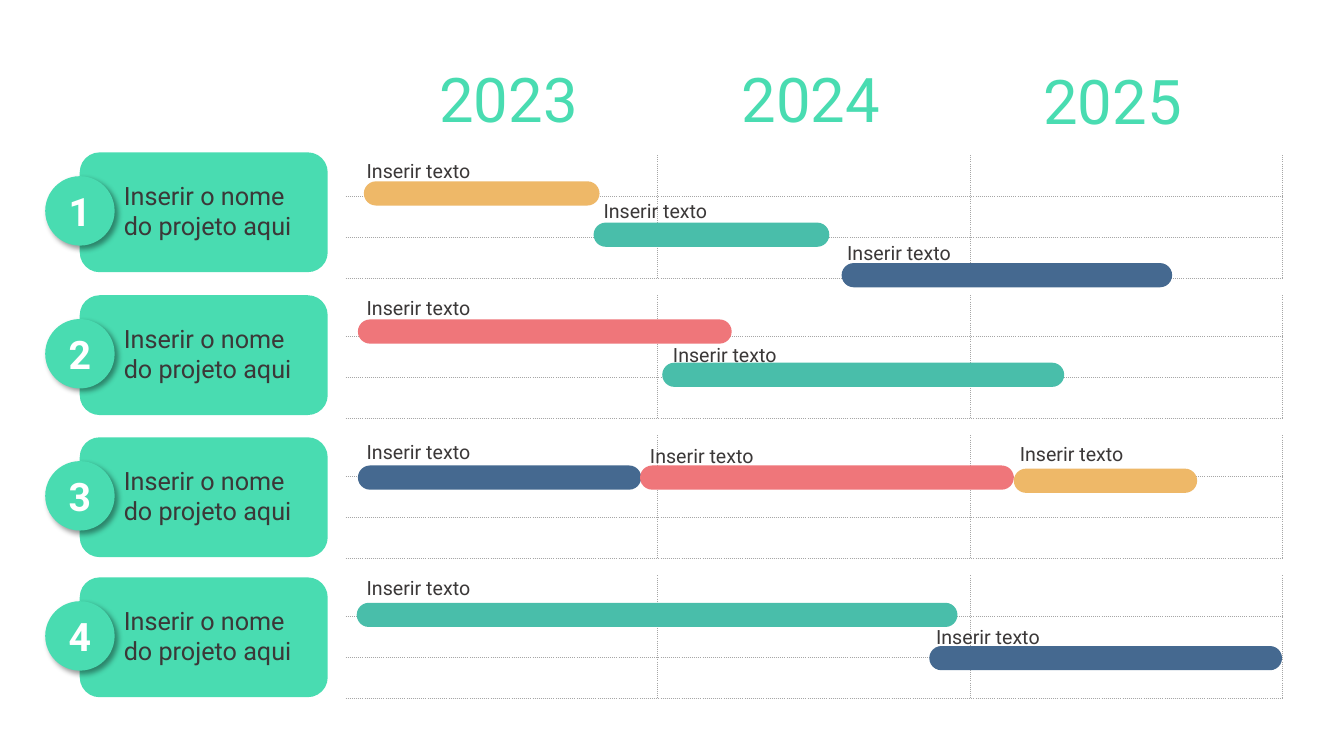
from lxml import etree
from pptx import Presentation
from pptx.dml.color import RGBColor
from pptx.enum.shapes import MSO_SHAPE as Shape
from pptx.enum.text import MSO_ANCHOR as Anchor, PP_ALIGN as Align
from pptx.oxml import parse_xml
from pptx.oxml.ns import nsdecls, qn
from pptx.util import Cm, Pt

MINT = RGBColor(0x49, 0xDC, 0xB1)
AMBER = RGBColor(0xEE, 0xB8, 0x68)
TEAL = RGBColor(0x49, 0xBE, 0xAA)
BLUE = RGBColor(0x45, 0x69, 0x90)
CORAL = RGBColor(0xEF, 0x76, 0x7A)
DARK = RGBColor(0x3B, 0x38, 0x38)
GREY = RGBColor(0xA6, 0xA6, 0xA6)
WHITE = RGBColor(0xFF, 0xFF, 0xFF)

prs = Presentation()
prs.slide_width, prs.slide_height = Cm(33.87), Cm(19.05)
slide = prs.slides.add_slide(prs.slide_layouts[6])


def add_filled(kind, left, top, width, height, colour):
    shape = slide.shapes.add_shape(kind, Cm(left), Cm(top), Cm(width), Cm(height))
    shape.shadow.inherit = False
    shape.fill.solid()
    shape.fill.fore_color.rgb = colour
    shape.line.fill.background()
    return shape


def add_text(lines, left, top, width, height, size, colour, wrap=True):
    frame = slide.shapes.add_textbox(Cm(left), Cm(top), Cm(width), Cm(height)).text_frame
    frame.word_wrap = wrap
    frame.text = lines
    for paragraph in frame.paragraphs:
        paragraph.font.name = "Roboto"
        paragraph.font.size = Pt(size)
        paragraph.font.color.rgb = colour
    return frame


# Project cards with numbered badges
for number, card_top in enumerate((3.84, 7.44, 11.02, 14.55), start=1):
    add_filled(Shape.ROUNDED_RECTANGLE, 2.01, card_top, 6.25, 3.02, MINT)

    badge = add_filled(Shape.OVAL, 1.14, card_top + 0.6, 1.75, 1.75, MINT)
    badge._element.spPr.find(qn("a:effectLst")).append(parse_xml(
        f'<a:outerShdw {nsdecls("a")} blurRad="50800" dist="38100" dir="2700000" '
        'algn="tl" rotWithShape="0"><a:srgbClr val="000000"><a:alpha val="40000"/>'
        '</a:srgbClr></a:outerShdw>'))
    badge.text_frame.text = str(number)
    badge.text_frame.vertical_anchor = Anchor.MIDDLE
    numeral = badge.text_frame.paragraphs[0]
    numeral.alignment = Align.CENTER
    numeral.font.name = "Roboto"
    numeral.font.size = Pt(28)
    numeral.font.bold = True
    numeral.font.color.rgb = WHITE

    add_text("Inserir o nome\ndo projeto aqui", 2.87, card_top + 0.58, 5.82, 1.8, 18, DARK)

# Year headings
for year, left, top in (("2023", 10.82, 1.42), ("2024", 18.44, 1.42), ("2025", 26.04, 1.47)):
    add_text(year, left, top, 4.14, 2.13, 44, MINT, wrap=False)

# Dotted time grids, open at the top and left
for project in range(4):
    grid = slide.shapes.add_table(
        3, 3, Cm(8.71), Cm(3.91 + 3.53 * project), Cm(23.6), Cm(3.1)).table
    grid.first_row = grid.horz_banding = False
    for row in range(3):
        for column in range(3):
            cell = grid.cell(row, column)
            cell.margin_top = cell.margin_bottom = 0
            properties = cell._tc.get_or_add_tcPr()
            sides = (("lnL", column > 0), ("lnR", True), ("lnT", row > 0), ("lnB", True))
            for side, dotted in sides:
                border = etree.SubElement(properties, qn(f"a:{side}"), w=str(Pt(0.5)))
                if dotted:
                    paint = etree.SubElement(border, qn("a:solidFill"))
                    etree.SubElement(paint, qn("a:srgbClr"), val=str(GREY))
                    etree.SubElement(border, qn("a:prstDash"), val="sysDot")
                else:
                    etree.SubElement(border, qn("a:noFill"))
            cell.fill.background()

# Task bars: colour, left, top, width, label left, label top
tasks = (
    (AMBER, 9.17, 4.57, 5.94, 8.99, 3.89),
    (TEAL, 14.96, 5.61, 5.94, 14.96, 4.88),
    (BLUE, 21.21, 6.63, 8.33, 21.1, 5.94),
    (CORAL, 9.02, 8.05, 9.42, 8.99, 7.32),
    (TEAL, 16.69, 9.14, 10.13, 16.71, 8.51),
    (BLUE, 9.02, 11.73, 7.14, 8.99, 10.97),
    (CORAL, 16.13, 11.73, 9.42, 16.13, 11.05),
    (AMBER, 25.55, 11.81, 4.62, 25.45, 11),
    (TEAL, 8.99, 15.19, 15.14, 8.99, 14.38),
    (BLUE, 23.42, 16.28, 8.89, 23.34, 15.62),
)
for colour, left, top, width, _, _ in tasks:
    bar = add_filled(Shape.ROUNDED_RECTANGLE, left, top, width, 0.61, colour)
    bar.adjustments[0] = 0.5

# Task labels
for *_, label_left, label_top in tasks:
    add_text("Inserir texto", label_left, label_top, 5.56, 0.86, 14, DARK)

prs.save("out.pptx")
